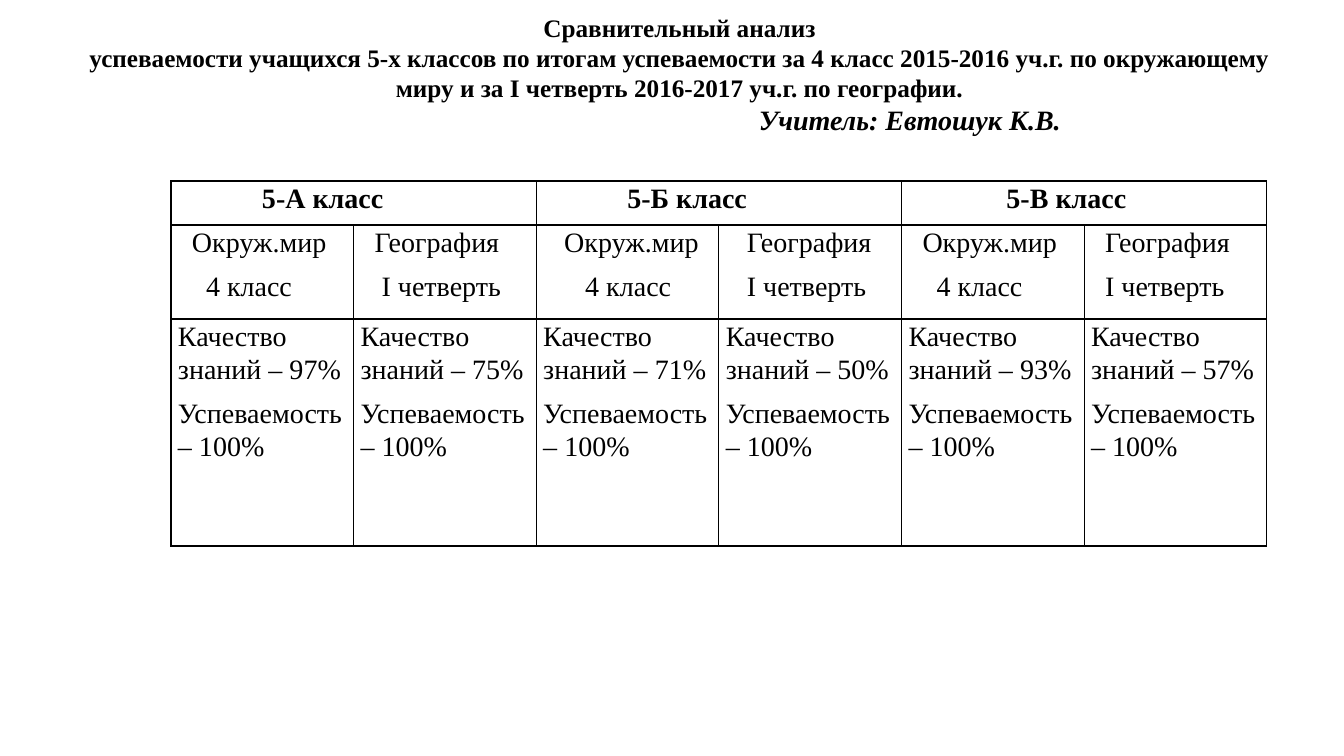
import pptx
import pptx.dml.color
import pptx.enum.text
import pptx.oxml.ns
import pptx.util
from lxml import etree

PX = 914400 / 100.8
FONT = "Times New Roman"
BLACK = "000000"

# Paragraphs are (text, left indent in px)
CLASSES = [("5-А класс", 84), ("5-Б класс", 84), ("5-В класс", 98)]
SUBJECTS = [
    [("Окруж.мир", 14), ("4 класс", 28)],
    [("География", 14), ("I четверть", 21)],
    [("Окруж.мир", 21), ("4 класс", 42)],
    [("География", 21), ("I четверть", 21)],
    [("Окруж.мир", 14), ("4 класс", 28)],
    [("География", 14), ("I четверть", 14)],
]
QUALITY = [97, 75, 71, 50, 93, 57]
ROW_HEIGHTS = [44, 94, 227]


def px(n):
    return pptx.util.Emu(round(n * PX))


def color(value):
    return pptx.dml.color.RGBColor.from_string(value)


def write(p, text, size, indent=0, bold=False, italic=False):
    p.text = text
    if indent:
        p._p.get_or_add_pPr().set("marL", str(px(indent)))
    for r in p.runs:
        r.font.name = FONT
        r.font.size = pptx.util.Pt(size)
        r.font.bold = bold
        r.font.italic = italic
        r.font.color.rgb = color(BLACK)


def add_title(s, left, top, width, height, lines):
    tf = s.shapes.add_textbox(px(left), px(top), px(width), px(height)).text_frame
    tf.word_wrap = True
    for i, (text, size, indent, italic) in enumerate(lines):
        p = tf.paragraphs[0] if i == 0 else tf.add_paragraph()
        p.alignment = pptx.enum.text.PP_ALIGN.CENTER
        write(p, text, size, indent, bold=True, italic=italic)


def set_borders(cell):
    tcPr = cell._tc.get_or_add_tcPr()
    qn = pptx.oxml.ns.qn
    for side in ("lnL", "lnR", "lnT", "lnB"):
        ln = etree.SubElement(tcPr, qn("a:" + side), w=str(pptx.util.Pt(1)))
        fill = etree.SubElement(ln, qn("a:solidFill"))
        etree.SubElement(fill, qn("a:srgbClr"), val=BLACK)


def fill_cell(cell, lines, bold=False):
    tf = cell.text_frame
    for i, (text, indent) in enumerate(lines):
        p = tf.paragraphs[0] if i == 0 else tf.add_paragraph()
        p.line_spacing = 1.07
        p.space_after = pptx.util.Pt(8)
        write(p, text, 20, indent, bold)


def add_grades(s, left, top, width):
    table = s.shapes.add_table(len(ROW_HEIGHTS), len(QUALITY), px(left), px(top),
                               px(width), px(sum(ROW_HEIGHTS))).table
    table.first_row = table.horz_banding = False
    for row, height in zip(table.rows, ROW_HEIGHTS):
        row.height = px(height)
    for cell in table.iter_cells():
        cell.margin_left = cell.margin_right = px(7)
        cell.margin_top = cell.margin_bottom = 0
        set_borders(cell)
        cell.fill.background()

    # Each class spans two subjects
    for i, heading in enumerate(CLASSES):
        cell = table.cell(0, 2 * i)
        cell.merge(table.cell(0, 2 * i + 1))
        fill_cell(cell, [heading], bold=True)

    # Subjects and results
    for col, (subject, quality) in enumerate(zip(SUBJECTS, QUALITY)):
        fill_cell(table.cell(1, col), subject)
        fill_cell(table.cell(2, col), [(f"Качество знаний – {quality}%", 0),
                                       ("Успеваемость – 100%", 0)])


def main():
    prs = pptx.Presentation()
    prs.slide_width, prs.slide_height = px(1344), px(756)
    s = prs.slides.add_slide(prs.slide_layouts[6])

    # Heading with the teacher's name
    add_title(s, 64, 7, 1231, 136, [
        ("Сравнительный анализ", 18, 0, False),
        ("успеваемости учащихся 5-х классов по итогам успеваемости за 4 класс "
         "2015-2016 уч.г. по окружающему миру и за I четверть 2016-2017 уч.г. "
         "по географии.", 18, 0, False),
        ("Учитель: Евтошук К.В.", 20, 461, True),
    ])

    # Comparison table
    add_grades(s, 171, 181, 1096)

    prs.save("out.pptx")


if __name__ == "__main__":
    main()
